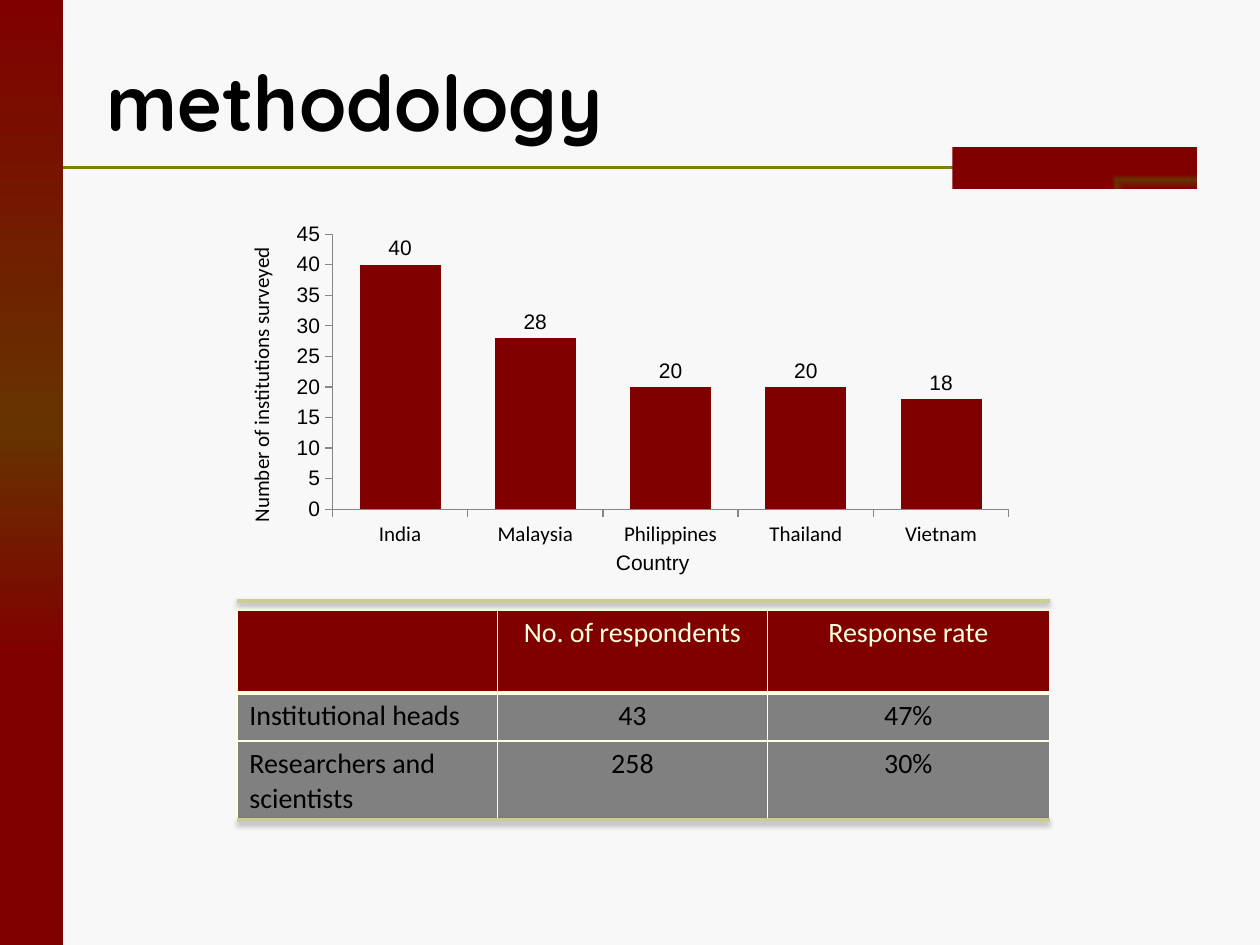
from dataclasses import dataclass

from lxml import etree
from pptx import Presentation
from pptx.chart.data import CategoryChartData
from pptx.dml.color import RGBColor
from pptx.enum.chart import XL_CHART_TYPE as ChartType, XL_LABEL_POSITION as LabelPos, XL_TICK_MARK as Tick
from pptx.enum.shapes import MSO_CONNECTOR as Connector, MSO_SHAPE as Shape
from pptx.enum.text import MSO_ANCHOR as Anchor, PP_ALIGN as Align
from pptx.oxml import parse_xml
from pptx.oxml.ns import nsdecls, qn
from pptx.util import Inches, Pt

COLORS = {
    "paper": "F8F8F8", "maroon": "800000", "brown": "663300", "olive": "808000",
    "sand": "CCCC99", "cream": "FFFFE1", "gray": "808080", "axis": "868686", "ink": "000000",
}
# Grid of 100 columns by 75 rows
WIDTH, HEIGHT = Inches(10), Inches(7.5)
COLUMNS, ROWS = 100, 75
LINEAR = '<a:lin ang="5400000" scaled="1"/>'
CORNER = '<a:path path="rect"><a:fillToRect l="100000" t="100000"/></a:path>'


@dataclass(frozen=True)
class Box:
    col: float
    row: float
    cols: float
    rows: float

    def place(self) -> tuple:
        return across(self.col), down(self.row), across(self.cols), down(self.rows)


@dataclass(frozen=True)
class Rule:
    start: float
    end: float
    row: float
    color: str
    weight: float
    shadow: bool = False


@dataclass(frozen=True)
class Band:
    box: Box
    direction: str


@dataclass(frozen=True)
class TableRow:
    texts: tuple
    rows: float
    fill: str
    ink: str
    bottom: float = 1


HEADER_RULE = Rule(5, 95, 13.3, "olive", 1.5)
TABLE_RULES = [Rule(18.8, 83.3, row, "sand", 2, True) for row in (47.7, 65.1)]
BANDS = [Band(Box(0, 0, 5, 75), LINEAR), Band(Box(75.6, 11.7, 19.4, 3.3), CORNER)]
TITLE_BOX = Box(7.5, 1.7, 90, 12.5)
CHART_BOX = Box(16.8, 16.2, 63.9, 29.9)
PLOT = {"x": 0.15, "y": 0.08, "w": 0.84, "h": 0.73}
SURVEYED = {"India": 40, "Malaysia": 28, "Philippines": 20, "Thailand": 20, "Vietnam": 18}
TABLE_BOX = Box(18.8, 48.4, 64.5, 16.7)
TABLE_COLS = (20.7, 21.4, 22.4)
RESPONSES = [
    TableRow(("", "No. of respondents", "Response rate"), 6.6, "maroon", "cream", 3),
    TableRow(("Institutional heads", "43", "47%"), 3.8, "gray", "ink"),
    TableRow(("Researchers and scientists", "258", "30%"), 6.3, "gray", "ink"),
]


def across(cols: float) -> int:
    return int(WIDTH * cols / COLUMNS)


def down(rows: float) -> int:
    return int(HEIGHT * rows / ROWS)


def rgb(name: str) -> RGBColor:
    return RGBColor.from_string(COLORS[name])


def set_font(font, size: float, face: str, color: str = "ink", bold: bool = False) -> None:
    font.size, font.name, font.bold = Pt(size), face, bold
    font.color.rgb = rgb(color)


def draw_rule(slide, rule: Rule) -> None:
    y = down(rule.row)
    line = slide.shapes.add_connector(Connector.STRAIGHT, across(rule.start), y, across(rule.end), y)
    line.line.color.rgb = rgb(rule.color)
    line.line.width = Pt(rule.weight)
    shadow = (
        f'<a:outerShdw blurRad="{Pt(3.1)}" dist="{Pt(1.6)}" dir="5400000" rotWithShape="0">'
        f'<a:srgbClr val="{COLORS["ink"]}"><a:alpha val="38000"/></a:srgbClr></a:outerShdw>'
    ) if rule.shadow else ""
    line._element.spPr.append(parse_xml(f'<a:effectLst {nsdecls("a")}>{shadow}</a:effectLst>'))


def draw_band(slide, band: Band) -> None:
    shape = slide.shapes.add_shape(Shape.RECTANGLE, *band.box.place())
    shape.shadow.inherit = False
    shape.line.fill.background()
    stops = "".join(
        f'<a:gs pos="{share * 1000}"><a:srgbClr val="{COLORS[color]}"/></a:gs>'
        for share, color in ((0, "maroon"), (45, "brown"), (70, "maroon"), (100, "maroon"))
    )
    gradient = f'<a:gradFill {nsdecls("a")}><a:gsLst>{stops}</a:gsLst>{band.direction}</a:gradFill>'
    shape._element.spPr.find(qn("a:prstGeom")).addnext(parse_xml(gradient))


def draw_title(slide, text: str) -> None:
    frame = slide.shapes.add_textbox(*TITLE_BOX.place()).text_frame
    frame.word_wrap = True
    frame.vertical_anchor = Anchor.MIDDLE
    frame.text = text
    set_font(frame.paragraphs[0].runs[0].font, 44, "Quicksand", bold=True)


def style_axis(axis, title: str, title_face: str, label_face: str) -> None:
    axis.has_major_gridlines = False
    axis.major_tick_mark, axis.minor_tick_mark = Tick.OUTSIDE, Tick.NONE
    axis.format.line.color.rgb = rgb("axis")
    set_font(axis.tick_labels.font, 12, label_face)
    axis.axis_title.text_frame.text = title
    set_font(axis.axis_title.text_frame.paragraphs[0].runs[0].font, 12, title_face)


def draw_chart(slide) -> None:
    data = CategoryChartData()
    data.categories = list(SURVEYED)
    data.add_series("Series 1", list(SURVEYED.values()))
    chart = slide.shapes.add_chart(ChartType.COLUMN_CLUSTERED, *CHART_BOX.place(), data).chart
    chart.has_title = chart.has_legend = False
    set_font(chart.font, 10, "Arial")
    style_axis(chart.category_axis, "Country", "Arial", "Calibri")
    style_axis(chart.value_axis, "Number of institutions surveyed", "Calibri", "Arial")
    chart.value_axis.minimum_scale, chart.value_axis.maximum_scale = 0, 45
    chart.value_axis.major_unit = 5

    # Columns and their values
    plot = chart.plots[0]
    plot.gap_width, plot.vary_by_categories = 67, False
    plot.series[0].format.fill.solid()
    plot.series[0].format.fill.fore_color.rgb = rgb("maroon")
    labels = plot.series[0].data_labels
    labels.show_value, labels.position = True, LabelPos.OUTSIDE_END
    set_font(labels.font, 12, "Arial")

    # Fixed inner plot area
    area = chart._chartSpace.chart.plotArea
    for old in area.findall(qn("c:layout")):
        area.remove(old)
    layout = etree.Element(qn("c:layout"))
    manual = etree.SubElement(layout, qn("c:manualLayout"))
    settings = {"layoutTarget": "inner", "xMode": "edge", "yMode": "edge", **PLOT}
    for tag, value in settings.items():
        etree.SubElement(manual, qn(f"c:{tag}")).set("val", str(value))
    area.insert(0, layout)


def style_cell(cell, row: TableRow, centred: bool) -> None:
    properties = cell._tc.get_or_add_tcPr()
    for side, weight in (("L", 1), ("R", 1), ("T", 1), ("B", row.bottom)):
        properties.append(parse_xml(
            f'<a:ln{side} {nsdecls("a")} w="{Pt(weight)}"><a:solidFill>'
            f'<a:srgbClr val="{COLORS["cream"]}"/></a:solidFill></a:ln{side}>'
        ))
    cell.fill.solid()
    cell.fill.fore_color.rgb = rgb(row.fill)
    paragraph = cell.text_frame.paragraphs[0]
    paragraph.alignment = Align.CENTER if centred else Align.LEFT
    set_font(paragraph.font, 16, "Calibri", row.ink)
    for run in paragraph.runs:
        set_font(run.font, 16, "Calibri", row.ink)


def draw_table(slide) -> None:
    table = slide.shapes.add_table(len(RESPONSES), len(TABLE_COLS), *TABLE_BOX.place()).table
    table.horz_banding = False
    for column, cols in zip(table.columns, TABLE_COLS):
        column.width = across(cols)
    for r, row in enumerate(RESPONSES):
        table.rows[r].height = down(row.rows)
        for c, text in enumerate(row.texts):
            table.cell(r, c).text = text
            style_cell(table.cell(r, c), row, centred=c > 0)


def main() -> None:
    deck = Presentation()
    deck.slide_width, deck.slide_height = WIDTH, HEIGHT
    slide = deck.slides.add_slide(deck.slide_layouts[6])
    slide.background.fill.solid()
    slide.background.fill.fore_color.rgb = rgb("paper")

    # Frame and title
    draw_rule(slide, HEADER_RULE)
    for band in BANDS:
        draw_band(slide, band)
    draw_title(slide, "methodology")

    # Response table, its rules and the survey chart
    draw_table(slide)
    for rule in TABLE_RULES:
        draw_rule(slide, rule)
    draw_chart(slide)
    deck.save("out.pptx")


if __name__ == "__main__":
    main()
